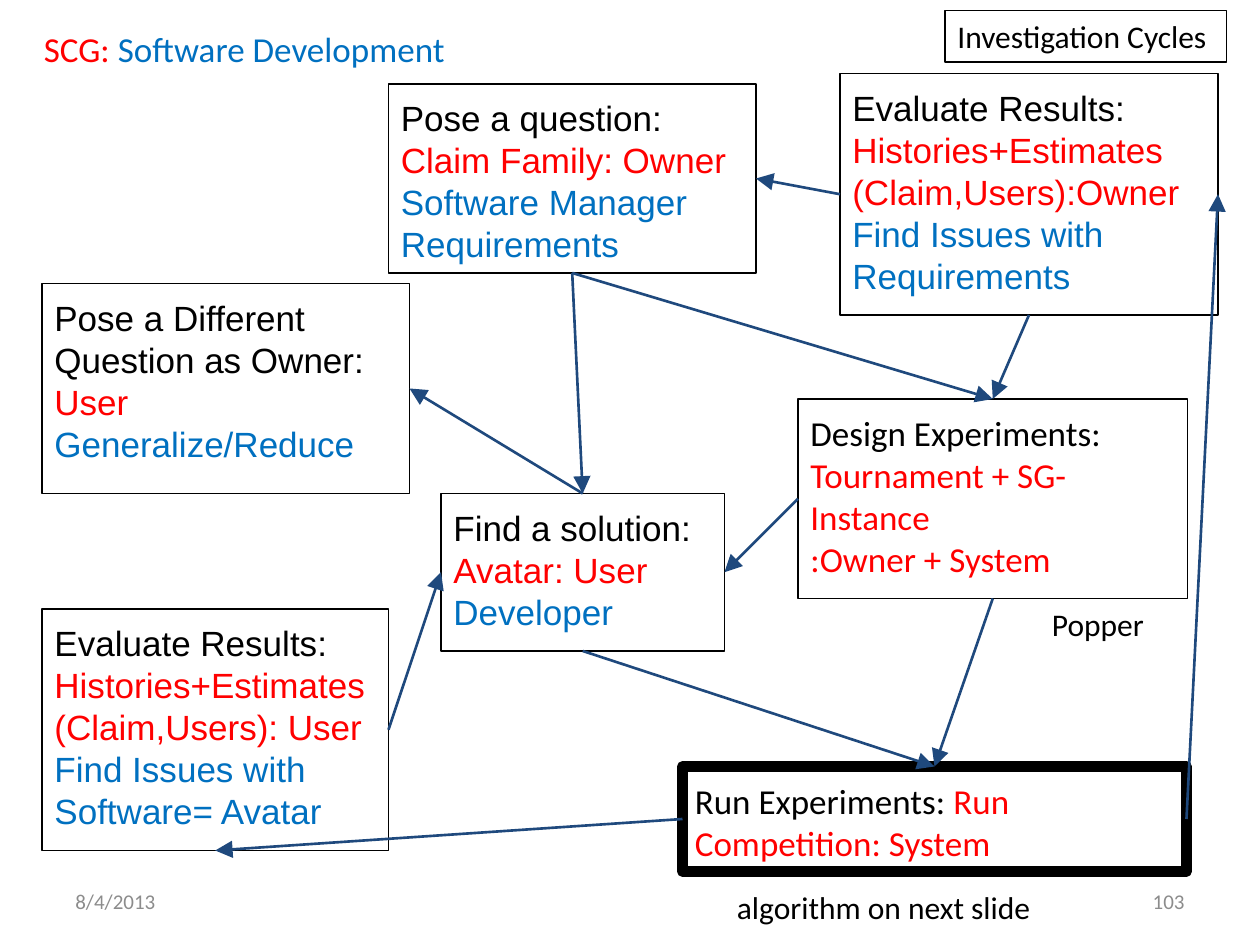
from dataclasses import dataclass
from typing import NamedTuple

from lxml.etree import SubElement
from pptx import Presentation
from pptx.dml.color import RGBColor
from pptx.enum.shapes import MSO_CONNECTOR, MSO_SHAPE
from pptx.enum.text import MSO_ANCHOR, PP_ALIGN
from pptx.oxml.ns import qn
from pptx.util import Inches, Pt


@dataclass(frozen=True)
class Theme:
    black: str = "000000"
    red: str = "FF0000"
    blue: str = "0070C0"
    navy: str = "1F497D"
    gray: str = "8C8C8C"
    sans: str = "Arial"
    body: str = "Calibri"
    big: int = 20
    mid: int = 18
    small: int = 12
    lead: int = 24


T = Theme()


class Run(NamedTuple):
    text: str
    color: str = T.black


class Box(NamedTuple):
    key: str
    at: tuple[float, float, float, float]
    paras: list[list[Run]]
    font: str = T.sans
    size: int = T.big
    line: float = 0.75
    inset: float = 0.1
    lead: int | None = T.lead


class Label(NamedTuple):
    at: tuple[float, float, float, float]
    runs: list[Run]
    size: int = T.mid
    align: PP_ALIGN = PP_ALIGN.LEFT
    anchor: MSO_ANCHOR = MSO_ANCHOR.TOP


class Arrow(NamedTuple):
    start: str
    out: int
    end: str
    into: int


TOP, LEFT, BOTTOM, RIGHT = range(4)
GRID = 12  # box units to the inch

# Steps of the cycles, in grid units
BOXES = [
    Box("pose", (37, 8, 35, 18), [
        [Run("Pose a question: "), Run("Claim Family: Owner", T.red)],
        [Run("Software Manager", T.blue)],
        [Run("Requirements", T.blue)]]),
    Box("design", (76, 38, 37.1, 19), [
        [Run("Design Experiments:")],
        [Run("Tournament + SG-Instance", T.red)],
        [Run(":Owner + System", T.red)]], T.body),
    Box("solve", (42, 47, 27, 15), [
        [Run("Find a solution:")],
        [Run("Avatar: User", T.red)],
        [Run("Developer", T.blue)]]),
    Box("user", (4, 58, 33, 23), [
        [Run("Evaluate Results: "),
         Run("Histories+Estimates (Claim,Users): User", T.red)],
        [Run("Find Issues with Software= Avatar", T.blue)]]),
    Box("run", (65, 73, 48, 10), [
        [Run("Run Experiments: "), Run("Run Competition: System", T.red)]],
        T.body, line=6),
    Box("owner", (80, 7, 36, 23), [
        [Run("Evaluate Results: "),
         Run("Histories+Estimates (Claim,Users):Owner", T.red)],
        [Run("Find Issues with Requirements", T.blue)]]),
    Box("other", (4, 27, 35, 20), [
        [Run("Pose a Different Question as Owner:")],
        [Run("User", T.red)],
        [Run("Generalize/Reduce", T.blue)]]),
    Box("cycles", (90, 1, 26.8, 4.9), [[Run("Investigation Cycles")]],
        T.body, T.mid, inset=0.05, lead=None),
]

ARROWS = [
    Arrow("pose", BOTTOM, "design", TOP),
    Arrow("pose", BOTTOM, "solve", TOP),
    Arrow("owner", LEFT, "pose", RIGHT),
    Arrow("design", BOTTOM, "run", TOP),
    Arrow("solve", BOTTOM, "run", TOP),
    Arrow("run", LEFT, "user", BOTTOM),
    Arrow("run", RIGHT, "owner", RIGHT),
    Arrow("user", RIGHT, "solve", LEFT),
    Arrow("owner", BOTTOM, "design", TOP),
    Arrow("solve", TOP, "other", RIGHT),
    Arrow("design", LEFT, "solve", RIGHT),
]

# Title, remarks and footer, in inches
LABELS = [
    Label((8.25, 4.75, 0.95, 0.41), [Run("Popper")]),
    Label((0.25, 0.17, 3.42, 0.44),
          [Run("SCG: ", T.red), Run("Software Development", T.blue)], T.big),
    Label((5.75, 7, 2.59, 0.41), [Run("algorithm on next slide")]),
    Label((0.5, 6.95, 2.33, 0.4), [Run("8/4/2013", T.gray)], T.small,
          anchor=MSO_ANCHOR.MIDDLE),
    Label((7.17, 6.95, 2.33, 0.4), [Run("103", T.gray)], T.small,
          PP_ALIGN.RIGHT, MSO_ANCHOR.MIDDLE),
]


def rgb(code: str) -> RGBColor:
    return RGBColor.from_string(code)


def write(frame, paras: list[list[Run]], font: str, size: int,
          align: PP_ALIGN = PP_ALIGN.LEFT, anchor: MSO_ANCHOR = MSO_ANCHOR.TOP,
          inset: float = 0.05, lead: int | None = None) -> None:
    frame.word_wrap = True
    frame.vertical_anchor = anchor
    frame.margin_left = frame.margin_right = Inches(0.1)
    frame.margin_top = frame.margin_bottom = Inches(inset)
    for i, runs in enumerate(paras):
        para = frame.add_paragraph() if i else frame.paragraphs[0]
        para.alignment = align
        if lead:
            para.line_spacing = Pt(lead)
        for item in runs:
            run = para.add_run()
            run.text = item.text
            run.font.name = font
            run.font.size = Pt(size)
            run.font.color.rgb = rgb(item.color)


def draw_box(slide, box: Box):
    place = (Inches(unit / GRID) for unit in box.at)
    shape = slide.shapes.add_shape(MSO_SHAPE.RECTANGLE, *place)
    shape.shadow.inherit = False
    shape.fill.background()
    shape.line.color.rgb = rgb(T.black)
    shape.line.width = Pt(box.line)
    write(shape.text_frame, box.paras, box.font, box.size,
          inset=box.inset, lead=box.lead)
    return shape


def draw_label(slide, label: Label) -> None:
    shape = slide.shapes.add_textbox(*map(Inches, label.at))
    write(shape.text_frame, [label.runs], T.body, label.size,
          label.align, label.anchor)


def draw_arrow(slide, arrow: Arrow, nodes: dict) -> None:
    link = slide.shapes.add_connector(MSO_CONNECTOR.STRAIGHT, 0, 0, 0, 0)
    link.begin_connect(nodes[arrow.start], arrow.out)
    link.end_connect(nodes[arrow.end], arrow.into)
    link.line.color.rgb = rgb(T.navy)
    link.line.width = Pt(1.5)
    props = link._element.spPr
    SubElement(props.find(qn("a:ln")), qn("a:tailEnd"),
               type="triangle", w="lg", len="lg")
    SubElement(props, qn("a:effectLst"))


def main() -> None:
    deck = Presentation()
    deck.slide_width, deck.slide_height = Inches(10), Inches(7.5)
    slide = deck.slides.add_slide(deck.slide_layouts[6])

    nodes = {box.key: draw_box(slide, box) for box in BOXES}
    for arrow in ARROWS:
        draw_arrow(slide, arrow, nodes)
    for label in LABELS:
        draw_label(slide, label)

    deck.save("out.pptx")


if __name__ == "__main__":
    main()
